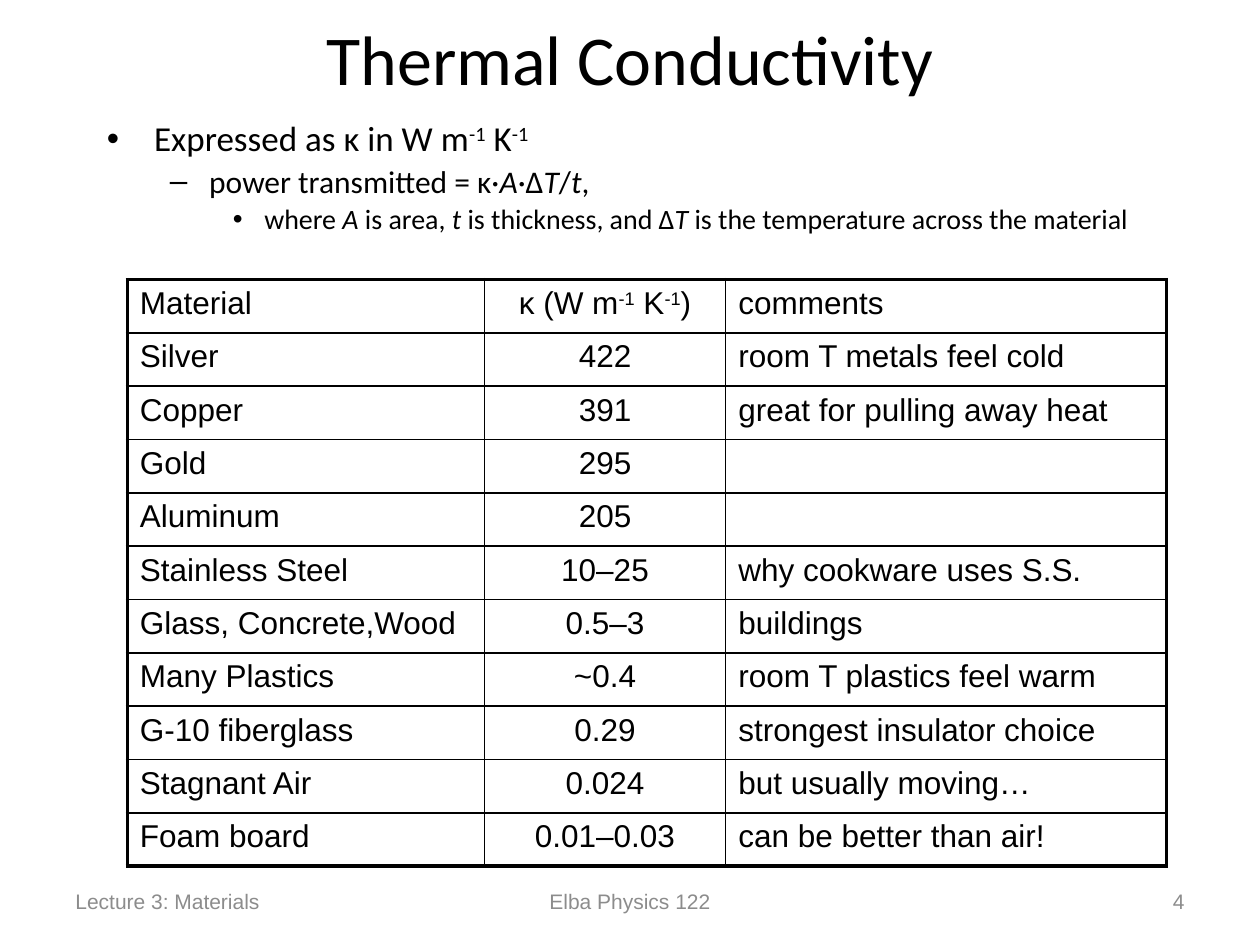
from dataclasses import dataclass

from lxml.etree import SubElement
from pptx import Presentation
from pptx.dml.color import RGBColor
from pptx.enum.text import MSO_ANCHOR, PP_ALIGN
from pptx.oxml.ns import qn
from pptx.util import Pt

LEFT, MID, RIGHT = PP_ALIGN.LEFT, PP_ALIGN.CENTER, PP_ALIGN.RIGHT


@dataclass(frozen=True)
class Theme:
    ink: str = "000000"
    gray: str = "8C8C8C"
    head: str = "Calibri"
    grid: str = "Arial"
    title: int = 40
    body: tuple = (20, 18, 16)
    cell: int = 18
    foot: int = 12
    thin: float = 1
    thick: float = 2.25


def apply(item, values):
    for name, value in values.items():
        setattr(item, name, value)


class Deck:
    def __init__(self, theme):
        self.theme = theme
        self.show = Presentation()
        apply(self.show, {"slide_width": Pt(720), "slide_height": Pt(540)})
        self.slide = self.show.slides.add_slide(self.show.slide_layouts[6])

    def add_runs(self, para, text, size, face, color, align=LEFT):
        """Split text at bars; a leading ^ means superscript, _ means italic."""
        para.alignment = align
        for part in filter(None, text.split("|")):
            run = para.add_run()
            run.text = part.lstrip("^_")
            apply(run.font, {"size": Pt(size), "name": face,
                             "italic": part.startswith("_")})
            run.font.color.rgb = RGBColor.from_string(color)
            if part.startswith("^"):
                run._r.get_or_add_rPr().set("baseline", "30000")

    def frame(self, box, anchor=MSO_ANCHOR.MIDDLE):
        frame = self.slide.shapes.add_textbox(*map(Pt, box)).text_frame
        apply(frame, {"word_wrap": True, "vertical_anchor": anchor})
        return frame

    def label(self, box, text, size, face, color, align):
        para = self.frame(box).paragraphs[0]
        self.add_runs(para, text, size, face, color, align)

    def bullets(self, box, items):
        frame = self.frame(box, MSO_ANCHOR.TOP)
        for level, (mark, left, hang, text) in enumerate(items):
            para = frame.add_paragraph() if level else frame.paragraphs[0]
            size = self.theme.body[level]
            apply(para, {"level": level, "line_spacing": 0.9,
                         "space_before": Pt(size * 0.2)})
            props = para._p.get_or_add_pPr()
            props.set("marL", str(Pt(left)))
            props.set("indent", str(-Pt(hang)))
            SubElement(props, qn("a:buFont"), typeface="Arial")
            SubElement(props, qn("a:buChar"), char=mark)
            self.add_runs(para, text, size, self.theme.head, self.theme.ink)

    def border(self, cell, edges):
        """Draw each side thick where it lies on the table's outer edge."""
        props = cell._tc.get_or_add_tcPr()
        for side, outer in edges.items():
            width = self.theme.thick if outer else self.theme.thin
            line = SubElement(props, qn(f"a:ln{side}"), w=str(Pt(width)))
            fill = SubElement(line, qn("a:solidFill"))
            SubElement(fill, qn("a:srgbClr"), val=self.theme.ink)

    def table(self, left, top, widths, height, rows):
        theme, last, end = self.theme, len(rows) - 1, len(widths) - 1
        table = self.slide.shapes.add_table(
            len(rows), len(widths), Pt(left), Pt(top),
            Pt(sum(widths)), Pt(height * len(rows))).table
        apply(table, {"first_row": False, "horz_banding": False})
        for col, width in zip(table.columns, widths):
            col.width = Pt(width)
        for r, row in enumerate(rows):
            table.rows[r].height = Pt(height)
            for c, text in enumerate(row):
                cell = table.cell(r, c)
                self.border(cell, {"L": c == 0, "R": c == end,
                                   "T": r == 0, "B": r == last})
                cell.fill.background()
                self.add_runs(cell.text_frame.paragraphs[0], text, theme.cell,
                              theme.grid, theme.ink, MID if c == 1 else LEFT)


BULLETS = [
    ("•", 27, 27, "Expressed as κ in W m|^-1| K|^-1"),
    ("–", 58.5, 22.5, "power transmitted = κ·|_A|·Δ|_T|/|_t|,"),
    ("•", 90, 18, "where |_A| is area, |_t| is thickness, and Δ|_T"
                  "| is the temperature across the material"),
]
ROWS = [
    ("Material", "κ (W m|^-1| K|^-1|)", "comments"),
    ("Silver", "422", "room T metals feel cold"),
    ("Copper", "391", "great for pulling away heat"),
    ("Gold", "295", ""),
    ("Aluminum", "205", ""),
    ("Stainless Steel", "10–25", "why cookware uses S.S."),
    ("Glass, Concrete,Wood", "0.5–3", "buildings"),
    ("Many Plastics", "~0.4", "room T plastics feel warm"),
    ("G-10 fiberglass", "0.29", "strongest insulator choice"),
    ("Stagnant Air", "0.024", "but usually moving…"),
    ("Foam board", "0.01–0.03", "can be better than air!"),
]
FOOTER = [
    (36, 168, "Lecture 3: Materials", LEFT),
    (246, 228, "Elba Physics 122", MID),
    (516, 168, "4", RIGHT),
]


def main():
    theme = Theme()
    deck = Deck(theme)
    for left, width, text, align in FOOTER:
        deck.label((left, 500.5, width, 28.75), text,
                   theme.foot, theme.grid, theme.gray, align)
    deck.label((54, -12, 612, 90), "Thermal Conductivity",
               theme.title, theme.head, theme.ink, MID)
    deck.bullets((54, 66, 612, 120), BULLETS)
    deck.table(72.75, 159.75, (204, 138, 252), 30.5, ROWS)
    deck.show.save("out.pptx")


if __name__ == "__main__":
    main()
